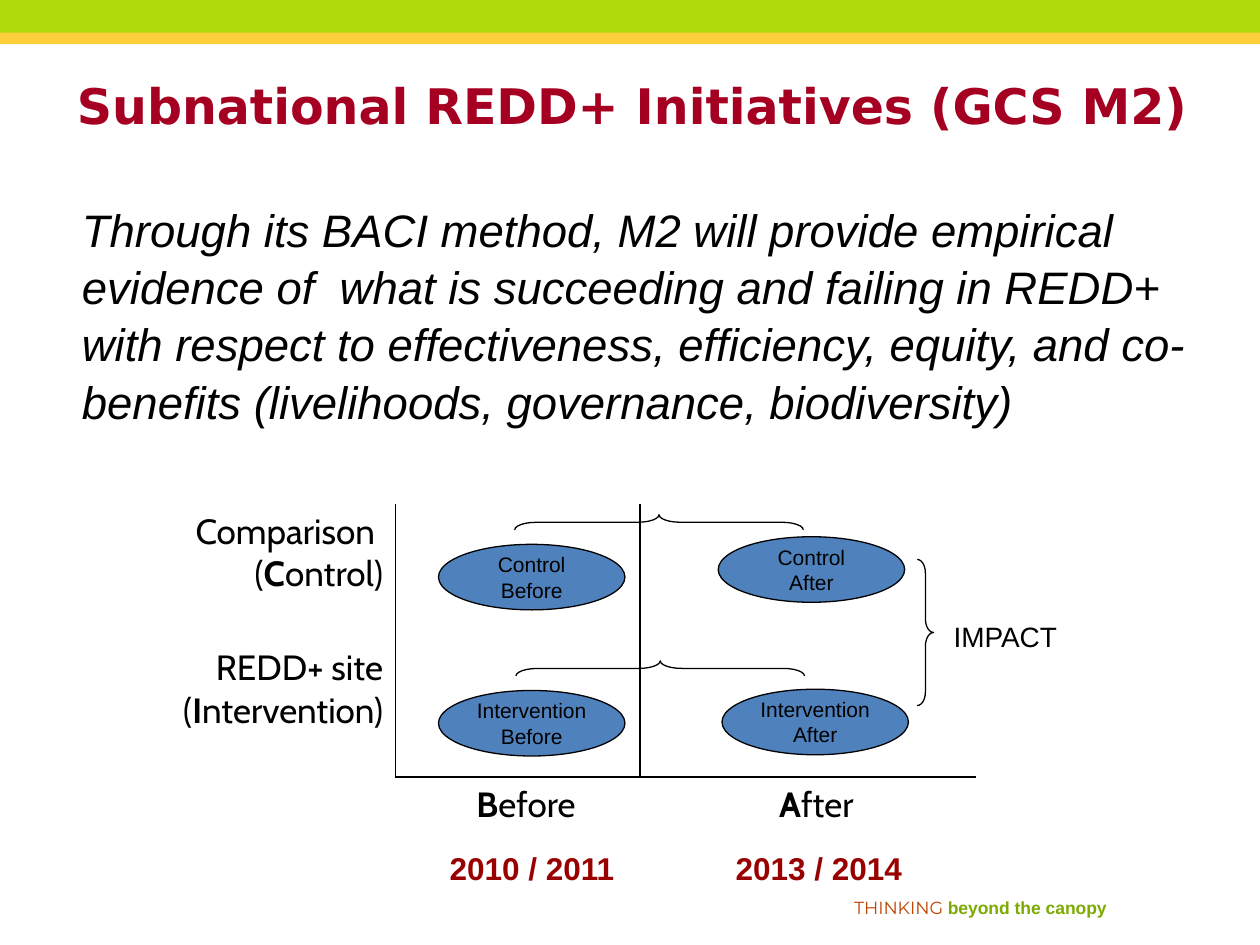
from typing import NamedTuple

from lxml.etree import SubElement
from pptx import Presentation
from pptx.dml.color import RGBColor
from pptx.enum.shapes import MSO_SHAPE as Shape
from pptx.enum.text import MSO_ANCHOR as Anchor, MSO_AUTO_SIZE as AutoSize, PP_ALIGN as Align
from pptx.oxml import parse_xml
from pptx.oxml.ns import nsdecls, qn
from pptx.util import Emu, Inches, Pt

COLS = 100
BLACK, RED, BLUE = "000000", "990000", "4F81BD"
PLAIN_TABLE = "{2D5ABB26-0587-4C30-8999-92F81FD0307C}"


class Box(NamedTuple):
    """A place on the slide grid, in columns and rows."""
    left: float
    top: float
    width: float
    height: float


class Run(NamedTuple):
    """A piece of text with its look."""
    text: str
    size: float
    color: str = BLACK
    font: str = "Arial"
    bold: bool = False
    italic: bool = False


class Brace(NamedTuple):
    """A curly brace with its turn and curl."""
    box: Box
    kind: Shape
    curl: float
    turn: float = 0


class Cell(NamedTuple):
    """A table cell with its lines of runs and ruled sides."""
    row: int
    col: int
    lines: tuple = ()
    align: Align = Align.RIGHT
    rules: str = ""


prs = Presentation()
prs.slide_width, prs.slide_height = Inches(10), Inches(7.5)


def grid(n: float) -> Emu:
    """Turn a count of grid units into a length."""
    return Emu(round(prs.slide_width * n / COLS))


def rgb(value: str) -> RGBColor:
    """Turn a hex string into a colour."""
    return RGBColor.from_string(value)


def place(box: Box) -> list:
    """Give the four lengths of a grid box."""
    return [grid(n) for n in box]


def write(p, *runs: Run) -> None:
    """Add formatted runs to a paragraph."""
    for run in runs:
        r = p.add_run()
        r.text = run.text
        f = r.font
        f.size, f.name, f.bold, f.italic = Pt(run.size), run.font, run.bold, run.italic
        f.color.rgb = rgb(run.color)


def add_label(slide, box: Box, *runs: Run) -> None:
    """Add a one-line text box."""
    tf = slide.shapes.add_textbox(*place(box)).text_frame
    tf.word_wrap, tf.auto_size = False, AutoSize.SHAPE_TO_FIT_TEXT
    write(tf.paragraphs[0], *runs)


def add_shape(slide, kind: Shape, box: Box, fill: str = "", line: str = ""):
    """Add a preset shape without shadow."""
    sp = slide.shapes.add_shape(kind, *place(box))
    sp.shadow.inherit = False
    if fill:
        sp.fill.solid()
        sp.fill.fore_color.rgb = rgb(fill)
    else:
        sp.fill.background()
    if line:
        sp.line.color.rgb, sp.line.width = rgb(line), Pt(0.75)
    else:
        sp.line.fill.background()
    return sp


def add_oval(slide, left: float, top: float, lines: tuple) -> None:
    """Add a study group as a labelled ellipse."""
    tf = add_shape(slide, Shape.OVAL, Box(left, top, 14.8, 5.2), BLUE, BLACK).text_frame
    tf.word_wrap, tf.vertical_anchor = False, Anchor.MIDDLE
    for i, text in enumerate(lines):
        p = tf.add_paragraph() if i else tf.paragraphs[0]
        p.alignment = Align.CENTER
        write(p, Run(text, 12))


def add_brace(slide, brace: Brace) -> None:
    """Add a curly brace."""
    sp = add_shape(slide, brace.kind, brace.box, line=BLACK)
    sp.adjustments[0] = brace.curl
    sp.rotation = brace.turn


def fill_placeholder(sp, box: Box, align: Align, run: Run) -> None:
    """Move a placeholder and give it one unbulleted paragraph."""
    sp.left, sp.top, sp.width, sp.height = place(box)
    tf = sp.text_frame
    tf.word_wrap, tf.auto_size, tf.vertical_anchor = True, AutoSize.NONE, Anchor.TOP
    p = tf.paragraphs[0]
    p_pr = p._p.get_or_add_pPr()
    p_pr.set("marL", "0")
    p_pr.set("indent", "0")
    SubElement(p_pr, qn("a:buNone"))
    p.alignment, p.space_before = align, Pt(0)
    write(p, run)


def rule_cell(cell, sides: str) -> None:
    """Draw the named sides of a cell, given in L, R, T, B order."""
    tc_pr = cell._tc.get_or_add_tcPr()
    for i, side in enumerate(sides):
        tc_pr.insert(i, parse_xml(
            f'<a:ln{side} {nsdecls("a")} w="12700"><a:solidFill>'
            f'<a:srgbClr val="{BLACK}"/></a:solidFill></a:ln{side}>'))


def add_matrix(slide, box: Box, widths: tuple, cells: tuple) -> None:
    """Add the study design table with its two axes."""
    frame = slide.shapes.add_table(3, len(widths), *place(box))
    table = frame.table
    table.first_row = table.horz_banding = False
    table._tbl.tblPr.find(qn("a:tableStyleId")).text = PLAIN_TABLE
    for column, width in zip(table.columns, widths):
        column.width = grid(width)
    for item in cells:
        cell = table.cell(item.row, item.col)
        cell.fill.background()
        rule_cell(cell, item.rules)
        tf = cell.text_frame
        for i, runs in enumerate(item.lines):
            p = tf.add_paragraph() if i else tf.paragraphs[0]
            p.alignment = item.align
            p._p.get_or_add_pPr().set("marL", str(grid(1.3)))
            write(p, *runs)


def cabin(text: str, bold: bool = False) -> Run:
    """Make a run in the table's lettering."""
    return Run(text, 20, font="Cabin", bold=bold)


def initial(text: str) -> tuple:
    """Make runs with the first letter in bold."""
    return cabin(text[0], True), cabin(text[1:])


def site(name: str, role: str) -> tuple:
    """Make the two lines that name a kind of site."""
    return (cabin(name),), (cabin("("), *initial(role + ")"))


CELLS = (
    Cell(0, 0, site("Comparison ", "Control"), rules="R"),
    Cell(0, 1, rules="L"), Cell(0, 2),
    Cell(1, 0, site("REDD+ site", "Intervention"), rules="R"),
    Cell(1, 1, rules="LB"), Cell(1, 2, rules="B"), Cell(2, 0),
    Cell(2, 1, (initial("Before"),), Align.CENTER, "T"),
    Cell(2, 2, (initial("After"),), Align.CENTER, "T"),
)
OVALS = (
    (57.3, 54.7, ("Intervention", "After")), (57, 42.6, ("Control", "After")),
    (34.8, 54.8, ("Intervention", "Before")), (34.8, 43.2, ("Control", "Before")),
)
BRACES = (
    Brace(Box(51.8, 41.6, 1.2, 22.9), Shape.LEFT_BRACE, 1.42, 90),
    Brace(Box(51.7, 30, 1.2, 22.9), Shape.LEFT_BRACE, 1.42, 90),
    Brace(Box(72.8, 44.4, 1.3, 11.6), Shape.RIGHT_BRACE, 0.83),
)
LABELS = (
    (Box(66.8, 70.7, 23.1, 2.7), Run("THINKING", 10, "BC4604", "Montserrat"),
     Run(" beyond the canopy", 10, "7DAA00", bold=True)),
    (Box(74.7, 48.7, 10.3, 3.7), Run("IMPACT", 16)),
    (Box(34.7, 66.9, 15.2, 4), Run("2010 / 2011", 18, RED, bold=True)),
    (Box(57.4, 66.9, 15.3, 4), Run("2013 / 2014", 18, RED, bold=True)),
)
BODY = ("Through its BACI method, M2 will provide empirical evidence of  what is succeeding "
        "and failing in REDD+ with respect to effectiveness, efficiency, equity, and "
        "co-benefits (livelihoods, governance, biodiversity)")

slide = prs.slides.add_slide(prs.slide_layouts[1])
add_shape(slide, Shape.RECTANGLE, Box(0, 0, COLS, 2.7), "B1DA0C")
add_shape(slide, Shape.RECTANGLE, Box(0, 2.6, COLS, 0.9), "FFCE3B")
title, body = slide.placeholders
fill_placeholder(title, Box(2.2, 5.5, 95.9, 7.5), Align.CENTER,
                 Run("Subnational REDD+ Initiatives (GCS M2)", 28, "A50021", "DejaVu Sans", True))
fill_placeholder(body, Box(5.5, 15.3, 90, 53.3), Align.LEFT, Run(BODY, 26, italic=True))
body.text_frame.paragraphs[0].line_spacing = 1.05
add_matrix(slide, Box(8.3, 40, 69.2, 32.5), (23.1, 19.4, 26.7), CELLS)
for oval in OVALS:
    add_oval(slide, *oval)
for brace in BRACES:
    add_brace(slide, brace)
for label in LABELS:
    add_label(slide, *label)
prs.save("out.pptx")
